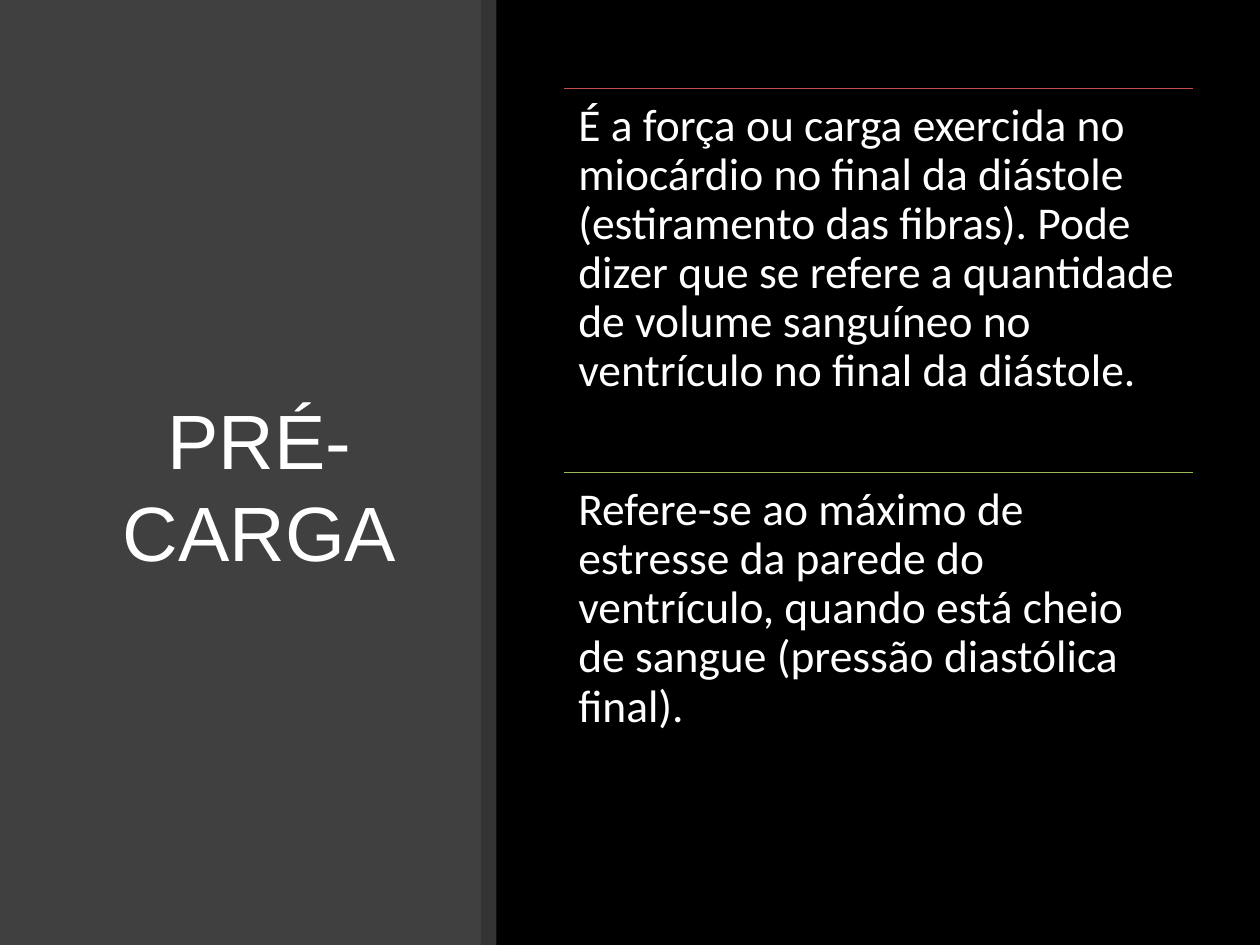
from dataclasses import dataclass

from lxml import etree
from pptx import Presentation
from pptx import util as u
from pptx.dml.color import RGBColor
from pptx.enum import shapes, text
from pptx.oxml.ns import qn


@dataclass(frozen=True)
class Theme:
    background: str = "000000"
    panel: str = "404040"
    light: str = "FFFFFF"
    title_font: str = "Arial"
    body_font: str = "Calibri"
    title_size: int = 44
    body_size: int = 26
    rule_width: float = 0.75


@dataclass(frozen=True)
class Section:
    color: str
    body: str


THEME = Theme()
WIDTH, HEIGHT = 10, 7.5
PANEL_W, STRIP_W = 3.82, 0.12
LEFT, TOP, COLUMN_W, ROW_H = 4.48, 0.7, 4.99, 3.05
INSET = 0.11

SECTIONS = (
    Section("C0504D", "É a força ou carga exercida no miocárdio no final da diástole "
            "(estiramento das fibras). Pode dizer que se refere a quantidade de volume "
            "sanguíneo no ventrículo no final da diástole."),
    Section("9BBB59", "Refere-se ao máximo de estresse da parede do ventrículo, quando "
            "está cheio de sangue (pressão diastólica final)."),
)


def rgb(color: str) -> RGBColor:
    return RGBColor.from_string(color)


def add_run(p, words: str, font: str, size: int) -> None:
    r = p.add_run()
    r.text = words
    r.font.name = font
    r.font.size = u.Pt(size)
    r.font.color.rgb = rgb(THEME.light)


def add_band(slide, left: float, width: float, color: str):
    """Full-height rectangle without an outline."""
    sp = slide.shapes.add_shape(shapes.MSO_SHAPE.RECTANGLE, u.Inches(left), 0,
                                u.Inches(width), u.Inches(HEIGHT))
    sp.shadow.inherit = False
    sp.fill.solid()
    sp.fill.fore_color.rgb = rgb(color)
    sp.line.fill.background()
    return sp


def set_opacity(sp, percent: int) -> None:
    color = sp._element.spPr.find(qn("a:solidFill"))[0]
    etree.SubElement(color, qn("a:alpha"), val=str(percent * 1000))


def add_section(slide, section: Section, row: int) -> None:
    """Coloured rule with its paragraph below."""
    left, width = u.Inches(LEFT), u.Inches(COLUMN_W)
    top = u.Inches(TOP + row * ROW_H)
    rule = slide.shapes.add_connector(shapes.MSO_CONNECTOR.STRAIGHT,
                                      left, top, left + width, top)
    rule.line.color.rgb = rgb(section.color)
    rule.line.width = u.Pt(THEME.rule_width)
    etree.SubElement(rule._element.spPr, qn("a:effectLst"))

    tf = slide.shapes.add_textbox(left, top, width, u.Inches(ROW_H)).text_frame
    tf.word_wrap = True
    tf.margin_left = tf.margin_right = u.Inches(INSET)
    tf.margin_top = tf.margin_bottom = u.Inches(INSET)
    p = tf.paragraphs[0]
    p.line_spacing = 0.9
    add_run(p, section.body, THEME.body_font, THEME.body_size)


def format_title(slide, words: str) -> None:
    title = slide.shapes.title
    title.left, title.top = u.Inches(0.69), u.Inches(0.89)
    title.width, title.height = u.Inches(2.74), u.Inches(5.91)
    tf = title.text_frame
    tf.word_wrap = True
    tf.auto_size = text.MSO_AUTO_SIZE.NONE
    tf.vertical_anchor = text.MSO_ANCHOR.MIDDLE
    p = tf.paragraphs[0]
    p.alignment = text.PP_ALIGN.CENTER
    add_run(p, words, THEME.title_font, THEME.title_size)


def main() -> None:
    prs = Presentation()
    prs.slide_width, prs.slide_height = u.Inches(WIDTH), u.Inches(HEIGHT)
    slide = prs.slides.add_slide(prs.slide_layouts[5])
    slide.background.fill.solid()
    slide.background.fill.fore_color.rgb = rgb(THEME.background)

    # Side panel, placed behind the title, and its translucent edge
    panel = add_band(slide, 0, PANEL_W, THEME.panel)
    slide.shapes.title._element.addprevious(panel._element)
    format_title(slide, "PRÉ-CARGA")
    set_opacity(add_band(slide, PANEL_W, STRIP_W, THEME.light), 20)

    # Text column
    for row, section in enumerate(SECTIONS):
        add_section(slide, section, row)

    prs.save("out.pptx")


if __name__ == "__main__":
    main()
